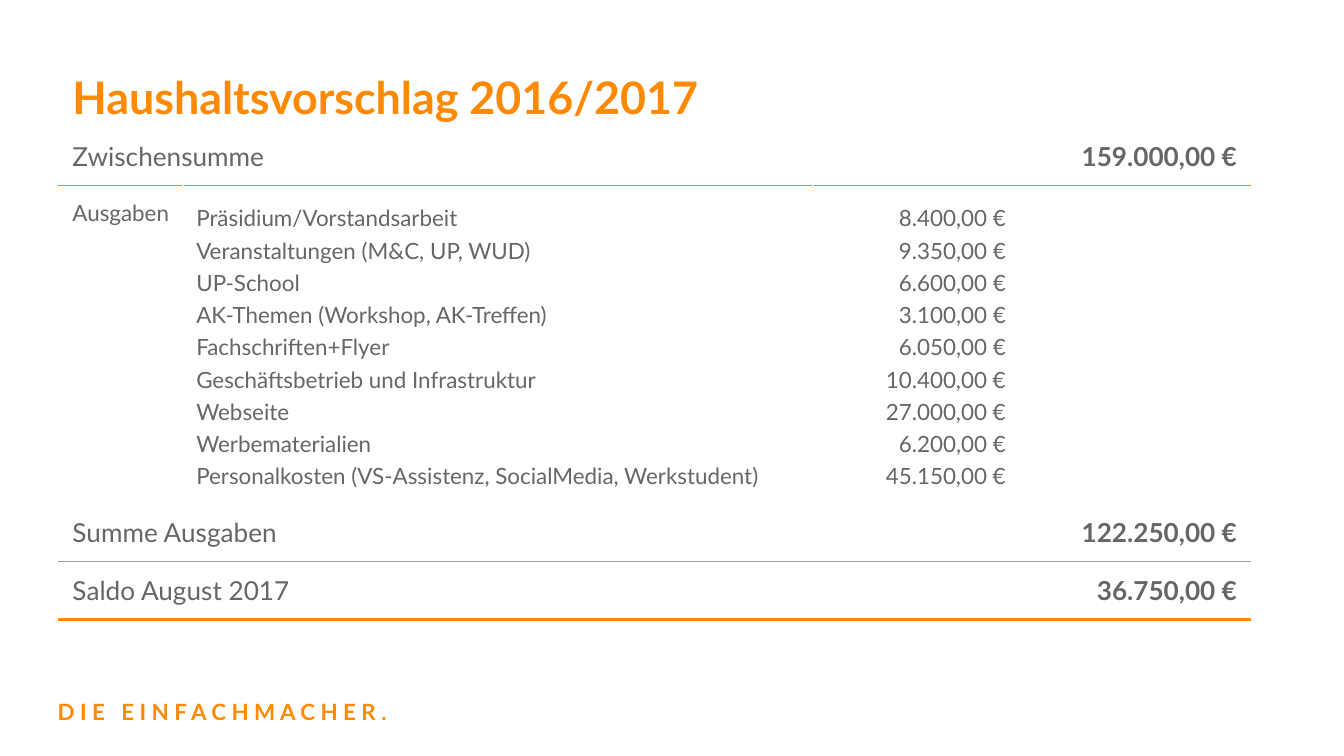
from lxml import etree
from pptx import Presentation
from pptx.dml.color import RGBColor
from pptx.enum.text import MSO_ANCHOR, PP_ALIGN
from pptx.oxml.ns import qn
from pptx.util import Cm, Pt

TOP, MIDDLE = MSO_ANCHOR.TOP, MSO_ANCHOR.MIDDLE
LEFT, RIGHT = PP_ALIGN.LEFT, PP_ALIGN.RIGHT
FONT = "Lato"
ORANGE, GREY, RULE = "FF8900", "666666", "9E9E9E"
PAD = Cm(0.25)

COLS = [2.34, 11.91, 3.89, 4.37]
ROWS = [1.1, 6, 1.1, 1.1]
# Colour and width of the rule below each row
RULES = [(ORANGE, 0.75), None, (RULE, 0.75), (ORANGE, 2.25)]
SUMS = {
    0: ("Zwischensumme", "159.000,00 €"),
    2: ("Summe Ausgaben", "122.250,00 €"),
    3: ("Saldo August 2017", "36.750,00 €"),
}
COSTS = [
    ("Präsidium/Vorstandsarbeit", "8.400,00 €"),
    ("Veranstaltungen (M&C, UP, WUD)", "9.350,00 €"),
    ("UP-School", "6.600,00 €"),
    ("AK-Themen (Workshop, AK-Treffen)", "3.100,00 €"),
    ("Fachschriften+Flyer", "6.050,00 €"),
    ("Geschäftsbetrieb und Infrastruktur", "10.400,00 €"),
    ("Webseite", "27.000,00 €"),
    ("Werbematerialien", "6.200,00 €"),
    ("Personalkosten (VS-Assistenz, SocialMedia, Werkstudent)", "45.150,00 €"),
]


def color(code):
    return RGBColor.from_string(code)


def write(frame, text, size, code, bold=False, align=LEFT, space=1.0):
    frame.text = text
    for par in frame.paragraphs:
        par.alignment, par.line_spacing = align, space
        for run in par.runs:
            font = run.font
            font.name, font.size, font.bold = FONT, Pt(size), bold
            font.color.rgb = color(code)


def pad(box):
    box.margin_left = box.margin_right = PAD
    box.margin_top = box.margin_bottom = PAD


def place(shape, left, top, width, height):
    shape.left, shape.top = Cm(left), Cm(top)
    shape.width, shape.height = Cm(width), Cm(height)
    frame = shape.text_frame
    frame.word_wrap, frame.vertical_anchor = True, TOP
    pad(frame)


def edge(cell, tag, rule):
    code, width = rule
    line = etree.SubElement(cell._tc.get_or_add_tcPr(), qn(tag), w=str(Pt(width)))
    fill = etree.SubElement(line, qn("a:solidFill"))
    etree.SubElement(fill, qn("a:srgbClr"), val=code)


def add_grid(slide):
    shape = slide.shapes.add_table(len(ROWS), len(COLS), Cm(1.12), Cm(2.41),
                                   Cm(sum(COLS)), Cm(sum(ROWS)))
    table = shape.table
    table.first_row = table.horz_banding = False
    for col, width in zip(table.columns, COLS):
        col.width = Cm(width)
    for row, height in zip(table.rows, ROWS):
        row.height = Cm(height)

    # Rules are shared by the cells above and below them
    for r, row in enumerate(table.rows):
        for cell in row.cells:
            pad(cell)
            if r and RULES[r - 1]:
                edge(cell, "a:lnT", RULES[r - 1])
            if RULES[r]:
                edge(cell, "a:lnB", RULES[r])
            cell.fill.background()
    return table


def fill_grid(table):
    # Totals
    for r, (label, total) in SUMS.items():
        table.cell(r, 0).merge(table.cell(r, 2))
        write(table.cell(r, 0).text_frame, label, 14, GREY)
        write(table.cell(r, 3).text_frame, total, 14, GREY, True, RIGHT)

    # Expenses
    write(table.cell(1, 0).text_frame, "Ausgaben", 12, GREY)
    for c, (items, align) in enumerate(zip(zip(*COSTS), (LEFT, RIGHT)), 1):
        cell = table.cell(1, c)
        cell.vertical_anchor = MIDDLE
        write(cell.text_frame, "\n".join(items), 12, GREY, False, align, 1.2)


def main():
    deck = Presentation()
    deck.slide_width, deck.slide_height = Cm(25.4), Cm(14.29)
    slide = deck.slides.add_slide(deck.slide_layouts[5])

    # Title
    title = slide.shapes.title
    place(title, 1.12, 0.91, 23.37, 1.63)
    write(title.text_frame, "Haushaltsvorschlag 2016/2017", 24, ORANGE, True, space=1.15)

    # Budget
    fill_grid(add_grid(slide))

    # Spaced-out claim
    claim = slide.shapes.add_textbox(0, 0, 0, 0)
    place(claim, 0.84, 12.95, 7.87, 1.04)
    write(claim.text_frame, " ".join("DIE EINFACHMACHER."), 12, ORANGE, True)

    deck.save("out.pptx")


if __name__ == "__main__":
    main()
